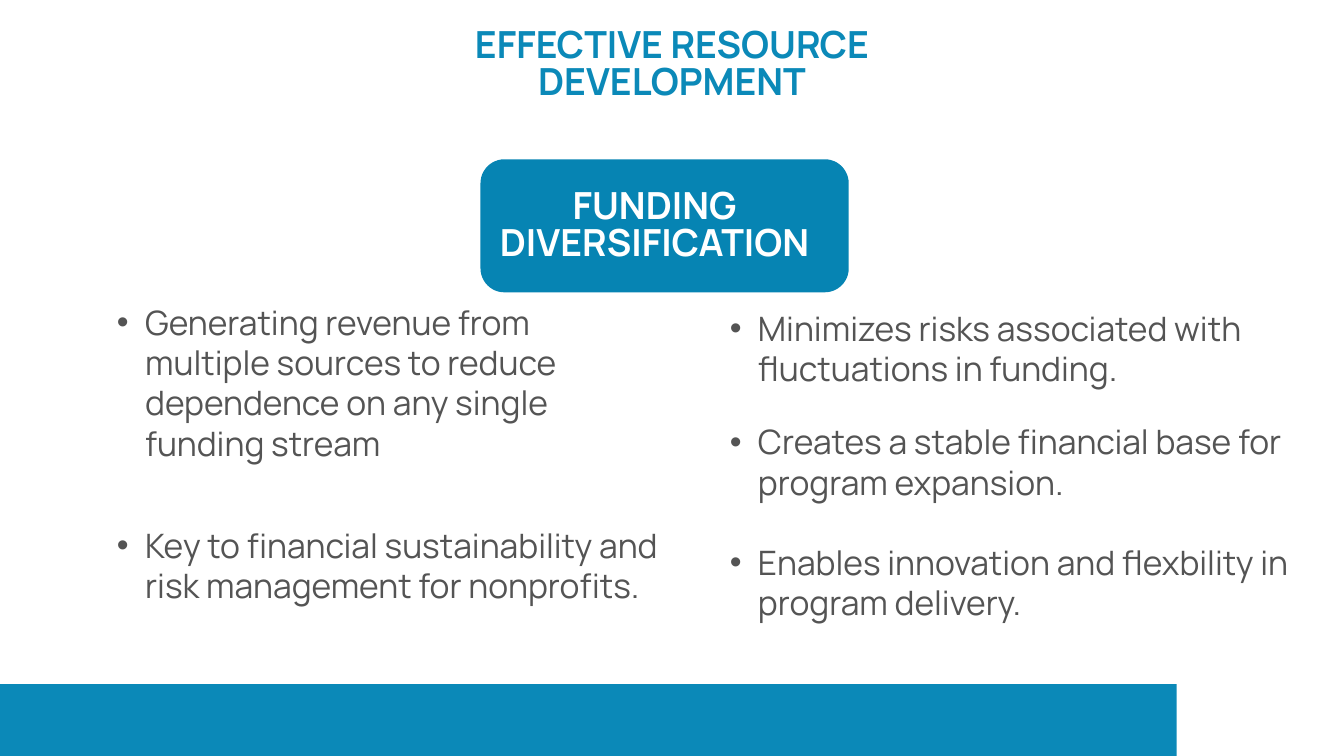
from lxml import etree
from pptx import Presentation
from pptx.dml.color import RGBColor
from pptx.enum.shapes import MSO_SHAPE
from pptx.enum.text import MSO_ANCHOR, MSO_AUTO_SIZE, PP_ALIGN
from pptx.oxml.ns import qn
from pptx.util import Inches, Pt

RECT, ROUND = MSO_SHAPE.RECTANGLE, MSO_SHAPE.ROUNDED_RECTANGLE
TOP, FIXED = MSO_ANCHOR.TOP, MSO_AUTO_SIZE.NONE
LEFT, CENTER = PP_ALIGN.LEFT, PP_ALIGN.CENTER

WIDE, HIGH = 20, 11.25
BLUE, BADGE, GREY, WHITE = "0B89B8", "0684B3", "545454", "FFFFFF"
FONT = "Manrope"
INDENT, HANG = 0.85, 0.42

TITLE = "EFFECTIVE RESOURCE DEVELOPMENT"
TOPIC = "FUNDING DIVERSIFICATION"
COLUMNS = [
    (1.31, [
        (4.49, 8.21, 2.41, "Generating revenue from multiple sources to reduce "
                           "dependence on any single funding stream"),
        (7.81, 8.69, 1.82, "Key to financial sustainability and risk management "
                           "for nonprofits."),
    ]),
    (10.43, [
        (4.58, 8.44, 1.23, "Minimizes risks associated with fluctuations in funding."),
        (6.27, 9.03, 1.23, "Creates a stable financial base for program expansion."),
        (8.06, 9.03, 1.23, "Enables innovation and flexbility in program delivery."),
    ]),
]


def color(code):
    return RGBColor.from_string(code)


def place(shape, box):
    shape.left, shape.top, shape.width, shape.height = map(Inches, box)


def panel(slide, kind, box, fill):
    shape = slide.shapes.add_shape(kind, *map(Inches, box))
    shape.shadow.inherit = False
    shape.fill.solid()
    shape.fill.fore_color.rgb = color(fill)
    shape.line.fill.background()
    return shape


def write(shape, text, size=36, lead=43.2, ink=GREY, bold=False, align=LEFT, bullet=False):
    frame = shape.text_frame
    frame.margin_left = frame.margin_right = frame.margin_top = frame.margin_bottom = 0
    frame.word_wrap = True
    frame.auto_size = FIXED
    frame.vertical_anchor = TOP
    para = frame.paragraphs[0]
    para.text = text
    para.alignment = align
    para.line_spacing = Pt(lead)
    para.space_before = Pt(0)
    if bullet:
        para.level = 1
        props = para._p.get_or_add_pPr()
        props.set("marL", str(Inches(INDENT)))
        props.set("indent", str(-Inches(HANG)))
        etree.SubElement(props, qn("a:buFont")).set("typeface", "Arial")
        etree.SubElement(props, qn("a:buChar")).set("char", "•")
    font = para.runs[0].font
    font.name, font.size, font.bold = FONT, Pt(size), bold
    font.color.rgb = color(ink)


def label(slide, box, text, **style):
    write(slide.shapes.add_textbox(*map(Inches, box)), text, **style)


def main():
    deck = Presentation()
    deck.slide_width, deck.slide_height = Inches(WIDE), Inches(HIGH)
    slide = deck.slides.add_slide(deck.slide_layouts[5])
    head = dict(size=40, lead=40, bold=True, align=CENTER)

    title = slide.shapes.title
    place(title, (6.88, 0.42, 6.24, 1.18))
    write(title, TITLE, ink=BLUE, **head)

    badge = panel(slide, ROUND, (7.15, 2.37, 5.48, 1.98), BADGE)
    badge.adjustments[0] = 0.18
    panel(slide, RECT, (0, HIGH - 1.07, 17.51, 1.07), BLUE)
    label(slide, (7.15, 2.82, 5.18, 1.14), TOPIC, ink=WHITE, **head)

    for left, points in COLUMNS:
        for top, width, height, text in points:
            label(slide, (left, top, width, height), text, bullet=True)

    deck.save("out.pptx")


if __name__ == "__main__":
    main()
